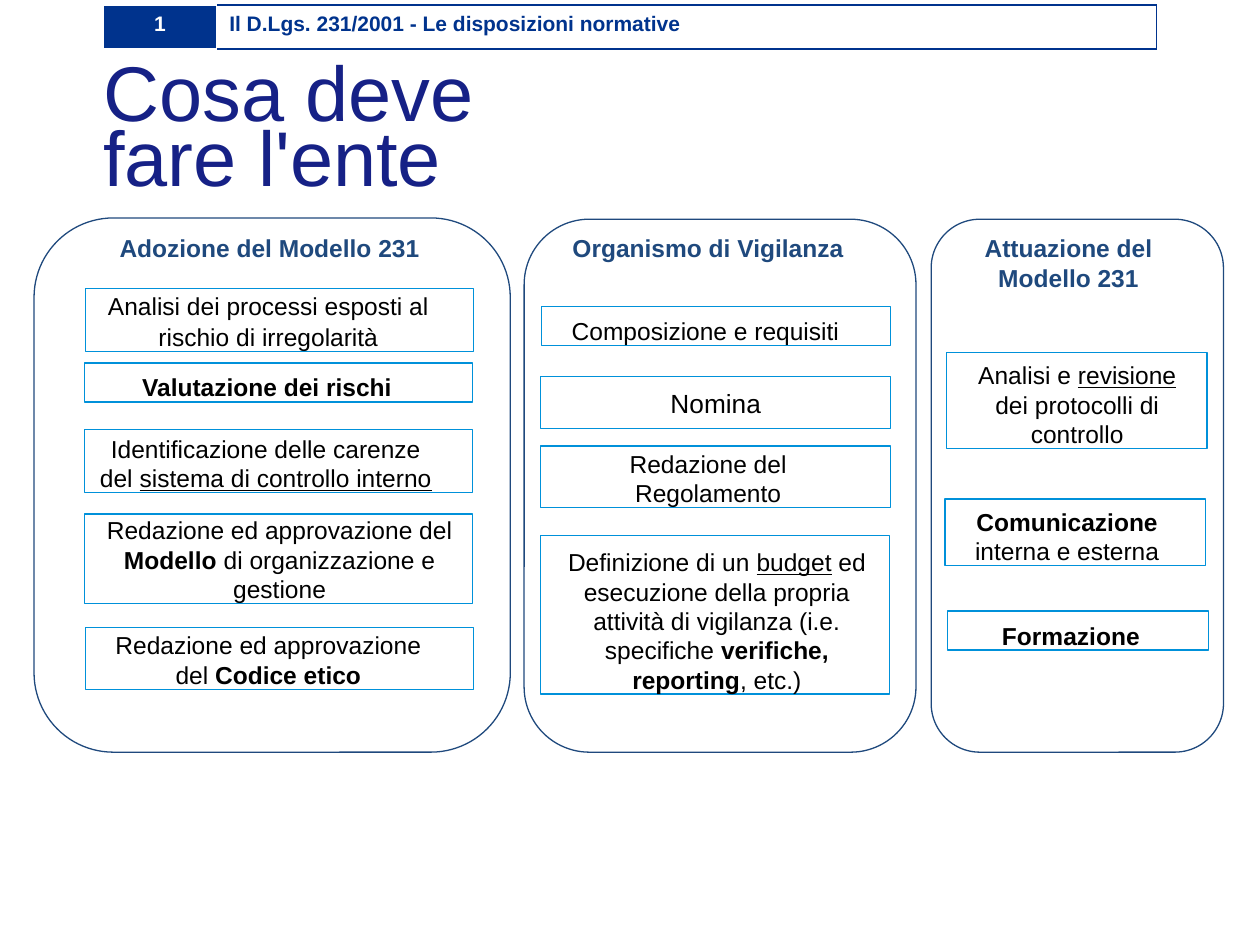
from lxml.etree import SubElement
from pptx import Presentation
from pptx.dml.color import RGBColor
from pptx.enum.shapes import MSO_SHAPE
from pptx.enum.text import MSO_ANCHOR, PP_ALIGN
from pptx.oxml.ns import qn
from pptx.util import Inches, Pt

COLORS = {"title": "162186", "panel": "1F497D", "step": "0091DA",
          "header": "00338D", "text": "000000", "white": "FFFFFF"}
FONT = "Arial"

# Panel: left, top, width, height
# Heading: text, box (left, top, width, height), text centre, text width
# Step: box, text centre, text width, paragraphs of (text, style) spans
PANELS = [
    {"frame": (0.27, 1.73, 3.78, 4.24),
     "heading": ("Adozione del Modello 231", (0.94, 1.83, 2.55, 0.25), 2.14, 2.4),
     "steps": [
         ((0.68, 2.29, 3.08, 0.5), 2.13, 2.7,
          [[("Analisi dei processi esposti al rischio di irregolarità", "")]]),
         ((0.67, 2.88, 3.08, 0.31), 2.12, 2.7, [[("Valutazione dei rischi", "b")]]),
         ((0.67, 3.41, 3.08, 0.5), 2.11, 2.68,
          [[("Identificazione delle carenze del ", ""),
            ("sistema di controllo interno", "u")]]),
         ((0.67, 4.08, 3.08, 0.71), 2.22, 2.9,
          [[("Redazione ed approvazione del ", ""), ("Modello ", "b"),
            ("di organizzazione e gestione", "")]]),
         ((0.68, 4.98, 3.08, 0.49), 2.13, 2.55,
          [[("Redazione ed approvazione del ", ""), ("Codice etico", "b")]]),
     ]},
    {"frame": (4.16, 1.74, 3.11, 4.23),
     "heading": ("Organismo di Vigilanza", (4.53, 1.83, 2.3, 0.25), 5.62, 2.18),
     "steps": [
         ((4.3, 2.43, 2.77, 0.31), 5.6, 2.4, [[("Composizione e requisiti", "")]]),
         ((4.29, 2.99, 2.78, 0.41), 5.68, 2.4, [[("Nomina", "")]]),
         ((4.29, 3.54, 2.78, 0.49), 5.62, 1.5, [[("Redazione del Regolamento", "")]]),
         ((4.29, 4.25, 2.77, 1.26), 5.69, 2.5,
          [[("Definizione di un ", ""), ("budget", "u"),
            (" ed esecuzione della propria attività di vigilanza (i.e. specifiche ", ""),
            ("verifiche, reporting", "b"), (", etc.)", "")]]),
     ]},
    {"frame": (7.39, 1.74, 2.32, 4.23),
     "heading": ("Attuazione del Modello 231", (7.81, 1.83, 1.44, 0.49), 8.48, 1.34),
     "steps": [
         ((7.51, 2.8, 2.07, 0.76), 8.55, 1.7,
          [[("Analisi e ", ""), ("revisione", "u"),
            (" dei protocolli di controllo", "")]]),
         ((7.5, 3.96, 2.07, 0.53), 8.47, 1.7,
          [[("Comunicazione", "b")], [("interna e esterna", "")]]),
         ((7.52, 4.85, 2.07, 0.31), 8.5, 1.7, [[("Formazione", "b")]]),
     ]},
]


def color(name):
    return RGBColor.from_string(COLORS[name])


def format_font(font, size, name, bold=False):
    font.name = FONT
    font.size = Pt(size)
    font.bold = bold
    font.color.rgb = color(name)


def place_text(box, center, width, anchor):
    """Centre the text area of the given width on a horizontal position."""
    frame = box.text_frame
    frame.word_wrap = True
    frame.vertical_anchor = anchor
    frame.margin_left = Inches(center - width / 2) - box.left
    frame.margin_right = box.left + box.width - Inches(center + width / 2)
    frame.margin_top = frame.margin_bottom = 0
    return frame


def add_outline(page, shape_type, bounds, line):
    box = page.shapes.add_shape(shape_type, *map(Inches, bounds))
    box.shadow.inherit = False
    box.fill.background()
    box.line.color.rgb = color(line)
    box.line.width = Pt(0.75)
    return box


def add_heading(page, text, bounds, center, width):
    box = page.shapes.add_textbox(*map(Inches, bounds))
    frame = place_text(box, center, width, MSO_ANCHOR.TOP)
    frame.margin_top = Inches(0.02)
    frame.text = text
    para = frame.paragraphs[0]
    para.alignment = PP_ALIGN.CENTER
    format_font(para.runs[0].font, 14, "panel", bold=True)


def add_step(page, bounds, center, width, paragraphs):
    box = add_outline(page, MSO_SHAPE.RECTANGLE, bounds, "step")
    frame = place_text(box, center, width, MSO_ANCHOR.BOTTOM)
    for index, spans in enumerate(paragraphs):
        para = frame.add_paragraph() if index else frame.paragraphs[0]
        para.alignment = PP_ALIGN.CENTER
        for text, style in spans:
            span = para.add_run()
            span.text = text
            format_font(span.font, 14, "text", bold=style == "b")
            if style == "u":
                span.font.underline = True
    return box


def add_border(cell, sides):
    properties = cell._tc.get_or_add_tcPr()
    for index, side in enumerate(sides):
        line = properties.makeelement(qn(f"a:{side}"), {"w": str(Pt(1))})
        fill = SubElement(line, qn("a:solidFill"))
        SubElement(fill, qn("a:srgbClr"), val=COLORS["header"])
        properties.insert(index, line)


def add_header(page):
    table = page.shapes.add_table(1, 2, Inches(0.82), Inches(0.04),
                                  Inches(8.36), Inches(0.35)).table
    table.first_row = table.horz_banding = False
    table.rows[0].height = Inches(0.35)
    columns = [("1", 0.9, "white", PP_ALIGN.CENTER, 0),
               ("Il D.Lgs. 231/2001 - Le disposizioni normative", 7.46,
                "header", PP_ALIGN.LEFT, 0.1)]
    for index, (text, width, text_color, alignment, margin) in enumerate(columns):
        table.columns[index].width = Inches(width)
        cell = table.cell(0, index)
        cell.margin_left = Inches(margin)
        cell.margin_right = cell.margin_bottom = 0
        cell.margin_top = Inches(0.06)
        cell.text = text
        para = cell.text_frame.paragraphs[0]
        para.alignment = alignment
        format_font(para.runs[0].font, 12, text_color, bold=True)
    number, subject = table.cell(0, 0), table.cell(0, 1)
    number.fill.solid()
    number.fill.fore_color.rgb = color("header")
    subject.fill.background()
    add_border(subject, ["lnR", "lnT", "lnB"])


def add_title(page):
    title = page.shapes.title
    title.left, title.top = Inches(0.82), Inches(0.55)
    title.width, title.height = Inches(3.89), Inches(0.54)
    frame = title.text_frame
    frame.text = "Cosa deve fare l'ente"
    frame.word_wrap = True
    frame.vertical_anchor = MSO_ANCHOR.TOP
    frame.margin_left = frame.margin_right = 0
    frame.margin_top = frame.margin_bottom = 0
    para = frame.paragraphs[0]
    para.alignment = PP_ALIGN.LEFT
    para.line_spacing = 0.7
    format_font(para.runs[0].font, 44.3, "title")


def main():
    deck = Presentation()
    deck.slide_width, deck.slide_height = Inches(10), Inches(7.5)
    page = deck.slides.add_slide(deck.slide_layouts[5])

    # Title and header strip
    add_title(page)
    add_header(page)

    # Panels with their headings and steps
    for panel in PANELS:
        add_outline(page, MSO_SHAPE.ROUNDED_RECTANGLE, panel["frame"], "panel")
        add_heading(page, *panel["heading"])
        for step in panel["steps"]:
            box = add_step(page, *step)
            text = box.text_frame.text
            if text == "Nomina":
                box.text_frame.vertical_anchor = MSO_ANCHOR.MIDDLE
                box.text_frame.paragraphs[0].runs[0].font.size = Pt(15)
            elif text.startswith("Analisi dei processi"):
                box.text_frame.paragraphs[0].line_spacing = Pt(18)

    deck.save("out.pptx")


if __name__ == "__main__":
    main()
